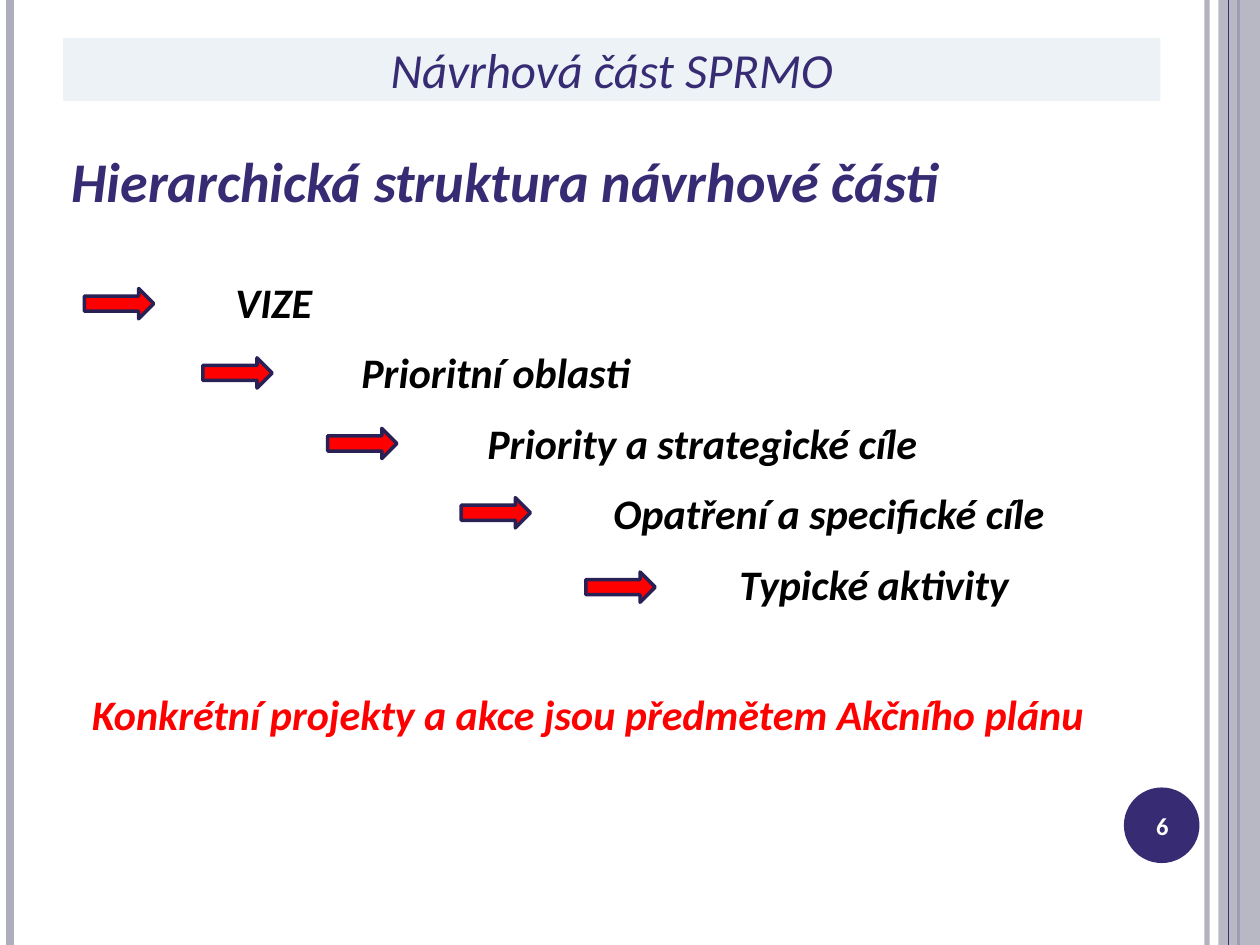
from lxml.etree import SubElement
from pptx import Presentation
from pptx.dml.color import RGBColor
from pptx.enum.shapes import MSO_CONNECTOR as Connector, MSO_SHAPE as Shape
from pptx.enum.text import MSO_ANCHOR as Anchor, PP_ALIGN as Align
from pptx.oxml.ns import qn
from pptx.util import Inches, Pt

INDIGO = RGBColor(0x37, 0x2C, 0x74)
DARK_INDIGO = RGBColor(0x29, 0x21, 0x56)
LILAC = RGBColor(0xAE, 0xAD, 0xBC)
PALE_BLUE = RGBColor(0xDE, 0xE9, 0xF0)
RED = RGBColor(0xFF, 0, 0)
BLACK = RGBColor(0, 0, 0)
WHITE = RGBColor(0xFF, 0xFF, 0xFF)

TITLE = "Návrhová část SPRMO"
HEADING = "Hierarchická struktura návrhové části"
LEVELS = [
    ("VIZE", 0.67, 2.29),
    ("Prioritní oblasti", 1.61, 2.84),
    ("Priority a strategické cíle", 2.6, 3.4),
    ("Opatření a specifické cíle", 3.66, 3.95),
    ("Typické aktivity", 4.65, 4.54),
]
CLOSING = "Konkrétní projekty a akce jsou předmětem Akčního plánu"
PAGE_NUMBER = "6"
RULES = [
    (9.58, LILAC, 3, 93),
    (0.08, LILAC, 4.5, 100),
    (9.83, INDIGO, 1.5, 100),
]
INNER_RULE = (9.75, INDIGO, 0.75, 100)


def set_opacity(fill, percent):
    color = fill._xPr.find(qn("a:solidFill"))[0]
    SubElement(color, qn("a:alpha"), val=str(percent * 1000))


def add_rule(page, x, color, width, opacity):
    rule = page.shapes.add_connector(
        Connector.STRAIGHT, Inches(x), 0, Inches(x), Inches(7.5))
    rule.line.color.rgb = color
    rule.line.width = Pt(width)
    if opacity < 100:
        set_opacity(rule.line.fill, opacity)
    SubElement(rule._element.spPr, qn("a:effectLst"))


def add_shape(page, kind, at, fill, line=None):
    shape = page.shapes.add_shape(kind, *map(Inches, at))
    shape.shadow.inherit = False
    shape.fill.solid()
    shape.fill.fore_color.rgb = fill
    if line is None:
        shape.line.fill.background()
    else:
        shape.line.color.rgb = line
        shape.line.width = Pt(2)
    return shape


def write(para, text, size, color, bold=True, italic=True, before=0, after=0,
          indent=0, align=Align.LEFT):
    para.text = text
    para.alignment = align
    para.space_before, para.space_after = Pt(before), Pt(after)
    font = para.font
    font.name, font.size = "Calibri", Pt(size)
    font.bold, font.italic = bold, italic
    font.color.rgb = color
    para._p.get_or_add_pPr().set("marL", str(Inches(indent)))


def add_text_box(page, at):
    frame = page.shapes.add_textbox(*map(Inches, at)).text_frame
    frame.word_wrap = True
    return frame


deck = Presentation()
deck.slide_width, deck.slide_height = Inches(10), Inches(7.5)
page = deck.slides.add_slide(deck.slide_layouts[5])

for rule in RULES:
    add_rule(page, *rule)
band = add_shape(page, Shape.RECTANGLE, (9.67, 0, 0.33, 7.5), LILAC)
set_opacity(band.fill, 87)
add_rule(page, *INNER_RULE)
add_shape(page, Shape.OVAL, (8.92, 6.25, 0.6, 0.6), INDIGO)

title = page.shapes.title
title.left, title.top, title.width, title.height = map(Inches, (0.5, 0.3, 8.71, 0.5))
title.fill.solid()
title.fill.fore_color.rgb = PALE_BLUE
set_opacity(title.fill, 56)
title.text_frame.vertical_anchor = Anchor.MIDDLE
write(title.text_frame.paragraphs[0], TITLE, 28, INDIGO, bold=False, align=Align.CENTER)

body = add_text_box(page, (0.47, 1.11, 8.82, 5.08))
write(body.paragraphs[0], HEADING, 32, INDIGO)
for step, (text, arrow_left, arrow_top) in enumerate(LEVELS):
    write(body.add_paragraph(), text, 24, BLACK, before=6 if step else 36,
          after=5.5, indent=1.3 + step)
    add_shape(page, Shape.RIGHT_ARROW, (arrow_left, arrow_top, 0.55, 0.24),
              RED, DARK_INDIGO)
write(body.add_paragraph(), CLOSING, 24, RED, before=40, indent=0.16)

number = add_text_box(page, (8.89, 6.27, 0.67, 0.57))
number.vertical_anchor = Anchor.MIDDLE
write(number.paragraphs[0], PAGE_NUMBER, 14, WHITE, italic=False, align=Align.CENTER)

deck.save("out.pptx")
